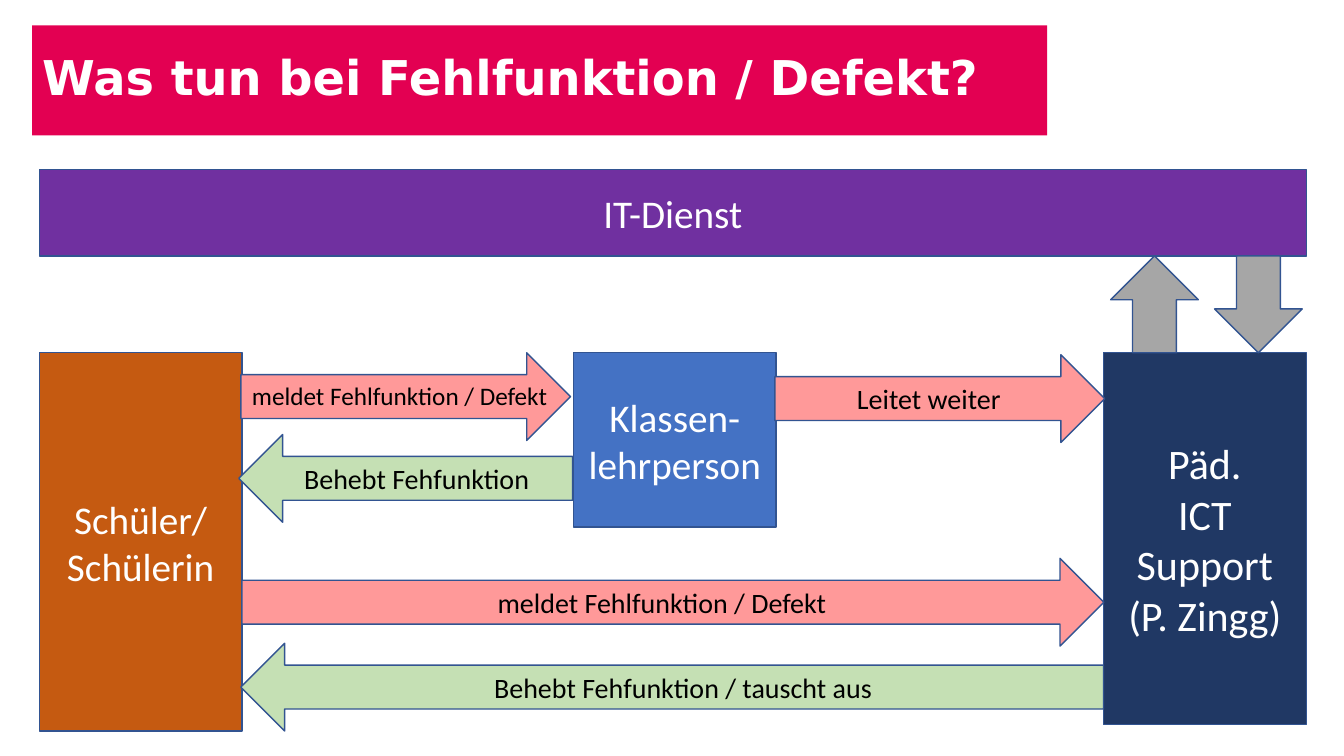
from dataclasses import dataclass

from pptx import Presentation
from pptx.dml.color import RGBColor
from pptx.enum.shapes import MSO_SHAPE
from pptx.enum.text import MSO_ANCHOR, MSO_AUTO_SIZE, PP_ALIGN
from pptx.util import Cm, Pt

BOX = MSO_SHAPE.RECTANGLE
RIGHT = MSO_SHAPE.RIGHT_ARROW
LEFT = MSO_SHAPE.LEFT_ARROW
UP = MSO_SHAPE.UP_ARROW
DOWN = MSO_SHAPE.DOWN_ARROW
MIDDLE = MSO_ANCHOR.MIDDLE
CENTRE = PP_ALIGN.CENTER
START = PP_ALIGN.LEFT


@dataclass(frozen=True)
class Theme:
    # Colours
    banner: str = "E30052"
    pupil: str = "C55A11"
    teacher: str = "4472C4"
    support: str = "203864"
    service: str = "7030A0"
    report: str = "FF9999"
    repair: str = "C5E0B4"
    link: str = "A6A6A6"
    edge: str = "325491"
    light: str = "FFFFFF"
    dark: str = "000000"
    # Fonts and sizes
    head: str = "DejaVu Sans"
    body: str = "Calibri"
    title: float = 34.2
    large: int = 30
    role: int = 28
    step: int = 20
    small: int = 18


THEME = Theme()

# Shared lengths in cm
EDGE = 0.99        # left side of the diagram
TOP = 8.89         # top of the role boxes
ROLE = 5.11        # width of a role box
THICK = 2.21       # thickness of every arrow
DESK = 27.81       # left side of the support box
BAR = 4.27         # top of the service bar
DEEP = 2.18        # height of the service bar
FULL = DESK + ROLE - EDGE


def paint(shape, color):
    shape.fill.solid()
    shape.fill.fore_color.rgb = RGBColor.from_string(color)


def write(frame, lines, size, color, font=THEME.body, align=CENTRE, bold=False):
    """Set one paragraph per line; return the paragraphs."""
    frame.word_wrap = True
    for i, line in enumerate(lines):
        para = frame.paragraphs[0] if i == 0 else frame.add_paragraph()
        para.alignment = align
        run = para.add_run()
        run.text = line
        run.font.name = font
        run.font.size = Pt(size)
        run.font.bold = bold
        run.font.color.rgb = RGBColor.from_string(color)
    return frame.paragraphs


def block(slide, kind, area, fill, lines=(), size=THEME.step, color=THEME.dark):
    """Add a filled, outlined shape with centred text."""
    shape = slide.shapes.add_shape(kind, *map(Cm, area))
    shape.shadow.inherit = False
    paint(shape, fill)
    shape.line.color.rgb = RGBColor.from_string(THEME.edge)
    shape.line.width = Pt(1)
    shape.text_frame.vertical_anchor = MIDDLE
    write(shape.text_frame, lines, size, color)
    return shape


def label(slide, area, text):
    box = slide.shapes.add_textbox(*map(Cm, area))
    write(box.text_frame, [text], THEME.small, THEME.dark, align=START)


def banner(slide, area, text):
    title = slide.shapes.title
    title.left, title.top, title.width, title.height = map(Cm, area)
    paint(title, THEME.banner)
    frame = title.text_frame
    frame.auto_size = MSO_AUTO_SIZE.NONE
    frame.vertical_anchor = MIDDLE
    paras = write(frame, [text], THEME.title, THEME.light, THEME.head, START, True)
    paras[0].line_spacing = 0.9


def main():
    deck = Presentation()
    deck.slide_width, deck.slide_height = Cm(33.87), Cm(19.05)
    slide = deck.slides.add_slide(deck.slide_layouts[5])

    banner(slide, (0.81, 0.64, 25.58, 2.77), "Was tun bei Fehlfunktion / Defekt?")

    # People: left, height, fill, lines, size
    roles = [
        (EDGE, 9.53, THEME.pupil, ["Schüler/", "Schülerin"], THEME.role),
        (14.45, 4.39, THEME.teacher, ["Klassen-", "lehrperson"], THEME.role),
        (DESK, 9.37, THEME.support, ["Päd.", "ICT Support", "(P. Zingg)"],
         THEME.large),
    ]
    for left, high, fill, lines, size in roles:
        block(slide, BOX, (left, TOP, ROLE, high), fill, lines, size, THEME.light)

    # Steps between people: kind, left, top, width, fill, lines
    steps = [
        (RIGHT, 19.53, 8.94, 8.31, THEME.report, ["Leitet weiter"]),
        (RIGHT, 6.1, 14.07, 21.72, THEME.report, ["meldet Fehlfunktion / Defekt"]),
        (LEFT, 6.02, 10.95, 8.41, THEME.repair, ["Behebt Fehfunktion"]),
        (LEFT, 6.07, 16.21, 21.74, THEME.repair,
         ["Behebt Fehfunktion / tauscht aus"]),
        (RIGHT, 6.07, TOP, 8.31, THEME.report, []),
    ]
    for kind, left, top, wide, fill, lines in steps:
        block(slide, kind, (left, top, wide, THICK), fill, lines)
    label(slide, (6.1, 9.47, 8.28, 1.8), "meldet Fehlfunktion / Defekt")

    # IT service and its exchange with support
    block(slide, BOX, (EDGE, BAR, FULL, DEEP), THEME.service, ["IT-Dienst"],
          THEME.role, THEME.light)
    base = BAR + DEEP
    for kind, left in ((DOWN, 30.61), (UP, 27.99)):
        block(slide, kind, (left, base, THICK, TOP - base), THEME.link)

    deck.save("out.pptx")


if __name__ == "__main__":
    main()
